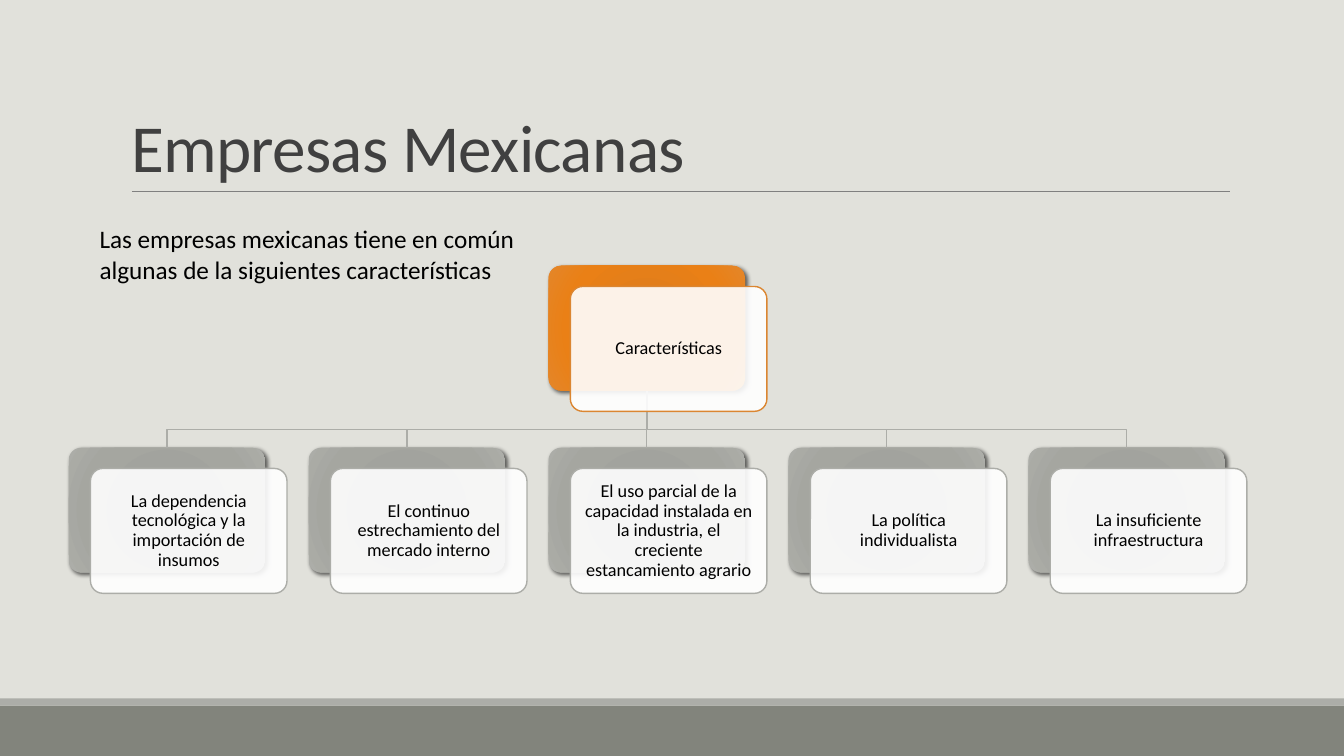
from lxml.etree import SubElement
from pptx import Presentation
from pptx.dml.color import RGBColor
from pptx.enum.shapes import MSO_CONNECTOR as CONNECTOR, MSO_SHAPE as SHAPE
from pptx.enum.text import MSO_ANCHOR as ANCHOR, MSO_AUTO_SIZE as AUTO_SIZE, PP_ALIGN as ALIGN
from pptx.oxml import parse_xml
from pptx.oxml.ns import nsdecls, qn
from pptx.util import Pt

# Content
TITLE = "Empresas Mexicanas"
INTRO = "Las empresas mexicanas tiene en común algunas de la siguientes características"
ROOT = "Características"
TRAITS = [
    "La dependencia tecnológica y la importación de insumos",
    "El continuo estrechamiento del mercado interno",
    "El uso parcial de la capacidad instalada en la industria, el creciente estancamiento agrario",
    "La política individualista",
    "La insuficiente infraestructura",
]

# Look
FONT = "Calibri"
GRAY, ORANGE = "ACADA8", "DB8631"
GRAY_STOPS = [(0, "A1A29C"), (34, "A2A39E"), (70, "A5A6A0"), (100, GRAY)]
ORANGE_STOPS = [(0, "E47D16"), (34, "E27E1A"), (70, "EA8016"), (100, "E48629")]

# Layout, in points
WIDTH, HEIGHT = 960, 540
CARD_W, CARD_H = 140.4, 89.2
SHIFT_X, SHIFT_Y = 15.6, 14.8
ROW_LEFT, ROW_TOP, PITCH = 49, 319.8, 171.4
ROOT_TOP, BEND_Y = 189.8, 306.8
MIDDLE = len(TRAITS) // 2


def color(hex_code):
    return RGBColor.from_string(hex_code)


def box(left, top, width, height):
    return Pt(left), Pt(top), Pt(width), Pt(height)


def write(frame, text, size, ink="000000"):
    paragraph = frame.paragraphs[0]
    run = paragraph.add_run()
    run.text = text
    run.font.name, run.font.size = FONT, Pt(size)
    run.font.color.rgb = color(ink)
    return paragraph, run


def add_bar(top, height, fill):
    bar = slide.shapes.add_shape(SHAPE.RECTANGLE, *box(0, top, WIDTH, height))
    bar.shadow.inherit = False
    bar.fill.solid()
    bar.fill.fore_color.rgb = color(fill)
    bar.line.fill.background()


def style_line(link, ink, width):
    link.line.color.rgb = color(ink)
    link.line.width = Pt(width)


def add_straight(x1, y1, x2, y2, ink, width):
    link = slide.shapes.add_connector(CONNECTOR.STRAIGHT, Pt(x1), Pt(y1), Pt(x2), Pt(y2))
    style_line(link, ink, width)
    SubElement(link._element.spPr, qn("a:effectLst"))
    return link


def add_card(left, top):
    card = slide.shapes.add_shape(SHAPE.ROUNDED_RECTANGLE, *box(left, top, CARD_W, CARD_H))
    card.adjustments[0] = 0.1
    card.shadow.inherit = False
    return card


def add_back_card(left, top, stops):
    card = add_card(left, top)
    stop_xml = "".join(
        f'<a:gs pos="{at * 1000}"><a:srgbClr val="{ink}"/></a:gs>' for at, ink in stops)
    properties = card._element.spPr
    properties.insert(2, parse_xml(
        f'<a:gradFill {nsdecls("a")} rotWithShape="1"><a:gsLst>{stop_xml}</a:gsLst>'
        '<a:path path="circle"><a:fillToRect l="100000" t="100000" r="100000" b="100000"/>'
        '</a:path></a:gradFill>'))
    card.line.fill.background()
    properties.find(qn("a:effectLst")).append(parse_xml(
        f'<a:outerShdw {nsdecls("a")} blurRad="38100" dist="25400" dir="2700000" rotWithShape="0">'
        '<a:srgbClr val="000000"><a:alpha val="60000"/></a:srgbClr></a:outerShdw>'))
    return card


def add_front_card(left, top, text, border):
    card = add_card(left + SHIFT_X, top + SHIFT_Y)
    card.fill.solid()
    card.fill.fore_color.rgb = color("FFFFFF")
    white = card._element.spPr.find(qn("a:solidFill"))[0]
    SubElement(white, qn("a:alpha"), val="90000")
    style_line(card, border, 1)
    frame = card.text_frame
    frame.word_wrap = True
    frame.vertical_anchor = ANCHOR.MIDDLE
    frame.margin_left = frame.margin_right = Pt(6.4)
    frame.margin_top = frame.margin_bottom = Pt(6.4)
    paragraph, _ = write(frame, text, 13)
    paragraph.alignment = ALIGN.CENTER
    paragraph.line_spacing = 0.9


deck = Presentation()
deck.slide_width, deck.slide_height = Pt(WIDTH), Pt(HEIGHT)
slide = deck.slides.add_slide(deck.slide_layouts[5])
slide.background.fill.solid()
slide.background.fill.fore_color.rgb = color("E1E1DB")

# Footer bands and title rule
add_bar(504, 36, "82847C")
add_bar(498.8, 5.2, GRAY)
add_straight(94.2, 136.5, 878.8, 136.5, "808080", 0.5)

# Title
title = slide.shapes.title
title.left, title.top, title.width, title.height = box(86.4, 22.6, 792, 114.2)
title.text_frame.auto_size = AUTO_SIZE.NONE
title.text_frame.vertical_anchor = ANCHOR.BOTTOM
heading, heading_run = write(title.text_frame, TITLE, 48, "404040")
heading.alignment = ALIGN.LEFT
heading.line_spacing = 0.85
heading_run.font._element.set("spc", "-50")

# Back cards of the tree
lefts = [ROW_LEFT + i * PITCH for i in range(len(TRAITS))]
root_left = lefts[MIDDLE]
root_card = add_back_card(root_left, ROOT_TOP, ORANGE_STOPS)
trait_cards = [add_back_card(left, ROW_TOP, GRAY_STOPS) for left in lefts]

# Branches: straight to the middle card, bent to the others
root_x, root_bottom = root_left + CARD_W / 2, ROOT_TOP + CARD_H
for left, trait_card in zip(lefts, trait_cards):
    trait_x = left + CARD_W / 2
    if left == root_left:
        trunk = add_straight(root_x, root_bottom, trait_x, ROW_TOP, GRAY, 1)
        trunk.begin_connect(root_card, 2)
        trunk.end_connect(trait_card, 0)
        continue
    outline = slide.shapes.build_freeform(Pt(root_x), Pt(root_bottom))
    outline.add_line_segments(
        [(Pt(root_x), Pt(BEND_Y)), (Pt(trait_x), Pt(BEND_Y)), (Pt(trait_x), Pt(ROW_TOP))],
        close=False)
    branch = outline.convert_to_shape()
    branch.shadow.inherit = False
    branch.fill.background()
    style_line(branch, GRAY, 1)

# Front cards with the wording
add_front_card(root_left, ROOT_TOP, ROOT, ORANGE)
for left, trait in zip(lefts, TRAITS):
    add_front_card(left, ROW_TOP, trait, GRAY)

# Introduction
intro = slide.shapes.add_textbox(*box(64, 156.2, 328.4, 51))
intro.text_frame.word_wrap = True
write(intro.text_frame, INTRO, 18)

deck.save("out.pptx")
